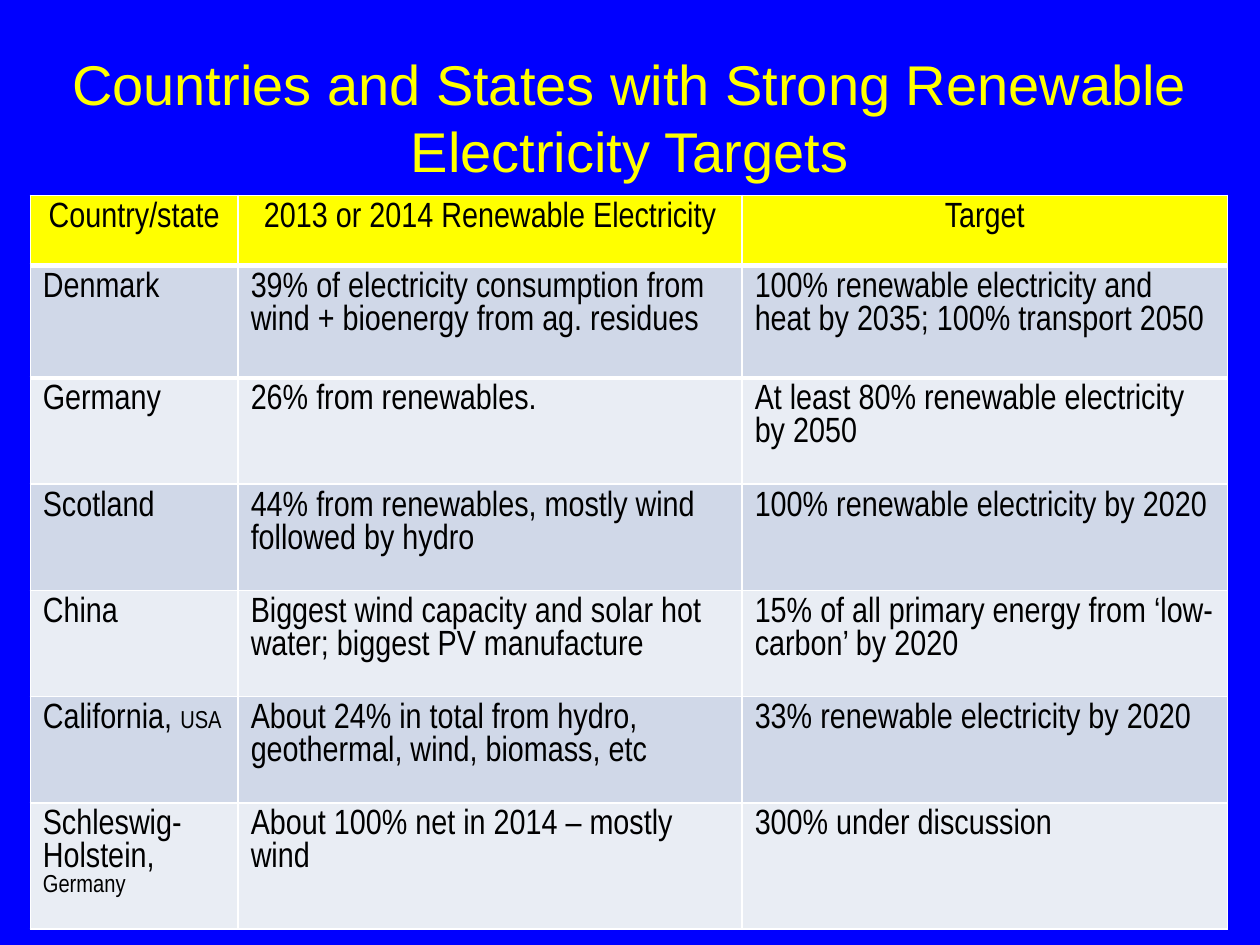
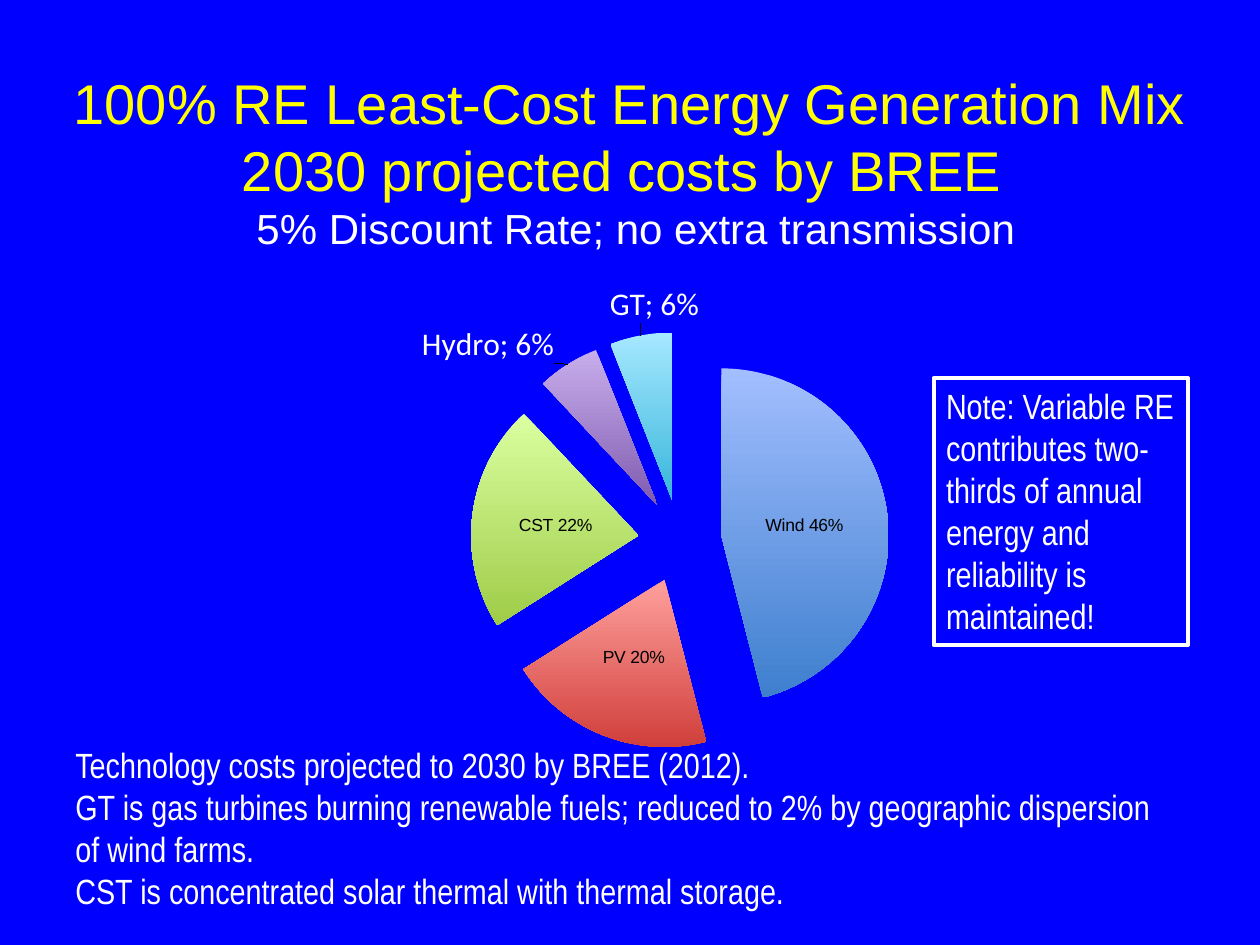
from typing import NamedTuple

import pptx
import pptx.chart.data
import pptx.dml.color
import pptx.enum.chart
import pptx.enum.text
import pptx.oxml
import pptx.oxml.ns
import pptx.util

Pt = pptx.util.Pt
RGBColor = pptx.dml.color.RGBColor
Align = pptx.enum.text.PP_ALIGN
Anchor = pptx.enum.text.MSO_ANCHOR
LabelPosition = pptx.enum.chart.XL_LABEL_POSITION

BLUE = RGBColor(0x00, 0x00, 0xFF)
YELLOW = RGBColor(0xFF, 0xFF, 0x00)
WHITE = RGBColor(0xFF, 0xFF, 0xFF)
BLACK = RGBColor(0x00, 0x00, 0x00)
BAND_COLOURS = (RGBColor(0xD0, 0xD8, 0xE8), RGBColor(0xE9, 0xED, 0xF4))

TITLE_FONT = "Arial"
BODY_FONT = "Arial Narrow"
CHART_FONT = "Calibri"
BODY_SIZE = 20


class Box(NamedTuple):
    left: float
    top: float
    width: float
    height: float

    def lengths(self) -> list:
        return [Pt(value) for value in self]


class Line(NamedTuple):
    """One paragraph of text in a single style."""
    text: str
    size: float = BODY_SIZE
    colour: RGBColor = WHITE
    font: str = BODY_FONT
    align: Align = Align.LEFT


class Target(NamedTuple):
    place: str
    country: str
    current: str
    goal: str


class Slice(NamedTuple):
    """One pie slice; a label shift, in chart fractions, puts its label outside."""
    name: str
    percent: int
    top_colour: RGBColor
    bottom_colour: RGBColor
    label_shift: tuple[float, float] | None = None


HEADINGS = ("Country/state", "2013 or 2014 Renewable Electricity", "Target")
TARGETS = (
    Target("Denmark", "",
           "39% of electricity consumption from wind + bioenergy from ag. residues",
           "100% renewable electricity and heat by 2035; 100% transport 2050"),
    Target("Germany", "", "26% from renewables.",
           "At least 80% renewable electricity by 2050"),
    Target("Scotland", "", "44% from renewables, mostly wind followed by hydro",
           "100% renewable electricity by 2020"),
    Target("China", "",
           "Biggest wind capacity and solar hot water; biggest PV manufacture",
           "15% of all primary energy from ‘low-carbon’ by 2020"),
    Target("California, ", "USA",
           "About 24% in total from hydro, geothermal, wind, biomass, etc",
           "33% renewable electricity by 2020"),
    Target("Schleswig-Holstein, ", "Germany", "About 100% net in 2014 – mostly wind",
           "300% under discussion"),
)
COLUMN_WIDTHS = (118.8, 288, 277.2)
ROW_HEIGHTS = (40.3, 64.1) + (60.7,) * 5

SLICES = (
    Slice("Wind", 46, RGBColor(0xA2, 0xBE, 0xFF), RGBColor(0x3E, 0x7F, 0xCE)),
    Slice("PV", 20, RGBColor(0xFF, 0xA0, 0x9D), RGBColor(0xD0, 0x3F, 0x3B)),
    Slice("CST", 22, RGBColor(0xDA, 0xFF, 0xA0), RGBColor(0x9F, 0xCC, 0x48)),
    Slice("Hydro", 6, RGBColor(0xC8, 0xAE, 0xEC), RGBColor(0x7F, 0x5B, 0xAF), (-0.01, 0.01)),
    Slice("GT", 6, RGBColor(0xA6, 0xE8, 0xFF), RGBColor(0x38, 0xB6, 0xDB), (0.06, -0.01)),
)
EXPLOSION = 25


def title_line(text: str, size: float = 32, colour: RGBColor = YELLOW) -> Line:
    return Line(text, size, colour, TITLE_FONT, Align.CENTER)


def style_font(font, size: float, colour: RGBColor, name: str) -> None:
    font.name = name
    font.size = Pt(size)
    font.bold = False
    font.color.rgb = colour


def add_slide(presentation):
    slide = presentation.slides.add_slide(presentation.slide_layouts[6])
    slide.background.fill.solid()
    slide.background.fill.fore_color.rgb = BLUE
    return slide


def add_text(slide, box: Box, lines: list[Line], anchor: Anchor = Anchor.TOP):
    shape = slide.shapes.add_textbox(*box.lengths())
    frame = shape.text_frame
    frame.word_wrap = True
    frame.vertical_anchor = anchor
    for index, line in enumerate(lines):
        paragraph = frame.add_paragraph() if index else frame.paragraphs[0]
        paragraph.text = line.text
        paragraph.alignment = line.align
        style_font(paragraph.font, line.size, line.colour, line.font)
    return shape


def add_title(slide, height: float, lines: list[Line]):
    return add_text(slide, Box(0, 21.6, 720, height), lines, Anchor.MIDDLE)


def fill_cell(cell, text: str, colour: RGBColor, align: Align, suffix: str = "") -> None:
    cell.fill.solid()
    cell.fill.fore_color.rgb = colour
    paragraph = cell.text_frame.paragraphs[0]
    paragraph.alignment = align
    for part, size in ((text, BODY_SIZE), (suffix, 14)):
        if part:
            run = paragraph.add_run()
            run.text = part
            style_font(run.font, size, BLACK, BODY_FONT)


def add_border(cell, side: str, width: float) -> None:
    cell._tc.get_or_add_tcPr().insert(0, pptx.oxml.parse_xml(
        f'<a:{side} {pptx.oxml.ns.nsdecls("a")} w="{Pt(width)}">'
        f'<a:solidFill><a:srgbClr val="{WHITE}"/></a:solidFill></a:{side}>'))


def add_target_table(slide) -> None:
    box = Box(17.3, 111.6, sum(COLUMN_WIDTHS), sum(ROW_HEIGHTS))
    table = slide.shapes.add_table(
        len(ROW_HEIGHTS), len(COLUMN_WIDTHS), *box.lengths()).table
    for column, width in zip(table.columns, COLUMN_WIDTHS):
        column.width = Pt(width)
    for row, height in zip(table.rows, ROW_HEIGHTS):
        row.height = Pt(height)

    for column, heading in enumerate(HEADINGS):
        fill_cell(table.cell(0, column), heading, YELLOW, Align.CENTER)
        # Thick rule under the heading row
        add_border(table.cell(0, column), "lnB", 3)
        add_border(table.cell(1, column), "lnT", 3)
    for index, target in enumerate(TARGETS):
        band = BAND_COLOURS[index % 2]
        place, current, goal = table.rows[index + 1].cells
        fill_cell(place, target.place, band, Align.LEFT, target.country)
        fill_cell(current, target.current, band, Align.LEFT)
        fill_cell(goal, target.goal, band, Align.LEFT)


def chart_xml(content: str):
    """Parse one chart element, with the chart namespace declared."""
    tag, rest = content.split(" ", 1)
    return pptx.oxml.parse_xml(f"<{tag} {pptx.oxml.ns.nsdecls('c')} {rest}")


def layout_xml(**settings):
    values = "".join(f'<c:{name} val="{value}"/>' for name, value in settings.items())
    return chart_xml(f"c:layout ><c:manualLayout>{values}</c:manualLayout></c:layout>")


def explode(following_element) -> None:
    following_element.addprevious(chart_xml(f'c:explosion val="{EXPLOSION}"/>'))


def remove_layout(element) -> None:
    for layout in element.findall(pptx.oxml.ns.qn("c:layout")):
        element.remove(layout)


def place_plot(chart, x: float, y: float, width: float, height: float) -> None:
    """Fix the inner plot area, in fractions of the chart."""
    plot_area = chart.plots[0]._element.getparent()
    remove_layout(plot_area)
    plot_area.insert(0, layout_xml(
        layoutTarget="inner", xMode="edge", yMode="edge", x=x, y=y, w=width, h=height))


def add_label(series, index: int, part: Slice) -> None:
    label = series.points[index].data_label
    run = label.text_frame.paragraphs[0].add_run()
    if part.label_shift is None:
        run.text = f"{part.name} {part.percent}%"
        style_font(run.font, 10, BLACK, TITLE_FONT)
        label.position = LabelPosition.CENTER
    else:
        run.text = f"{part.name}; {part.percent}%"
        style_font(run.font, 18, WHITE, CHART_FONT)
        label.position = LabelPosition.OUTSIDE_END
        x, y = part.label_shift
        labels = series._element.find(pptx.oxml.ns.qn("c:dLbls"))
        element = labels.findall(pptx.oxml.ns.qn("c:dLbl"))[index]
        remove_layout(element)
        element.insert(1, layout_xml(x=x, y=y))


def add_mix_chart(slide) -> None:
    data = pptx.chart.data.CategoryChartData()
    data.categories = [part.name for part in SLICES]
    data.add_series("Series 1", [part.percent for part in SLICES])
    chart = slide.shapes.add_chart(
        pptx.enum.chart.XL_CHART_TYPE.PIE,
        *Box(81.4, 155.5, 568.8, 284.4).lengths(), data).chart
    chart.has_legend = False
    chart.has_title = False
    style_font(chart.font, 18, BLACK, CHART_FONT)
    place_plot(chart, 0.33, 0.12, 0.42, 0.84)

    plot = chart.plots[0]
    plot.vary_by_categories = True
    series = plot.series[0]
    for index, part in enumerate(SLICES):
        fill = series.points[index].format.fill
        fill.gradient()
        fill.gradient_angle = 270
        for stop, colour in zip(fill.gradient_stops, (part.top_colour, part.bottom_colour)):
            stop.color.rgb = colour
        add_label(series, index, part)

    # Pull the slices apart
    slice_elements = series._element.findall(pptx.oxml.ns.qn("c:dPt"))
    explode(slice_elements[0])
    for element in slice_elements:
        explode(element.find(pptx.oxml.ns.qn("c:spPr")))


def build_targets_slide(presentation) -> None:
    slide = add_slide(presentation)
    add_title(slide, 90, [
        title_line("Countries and States with Strong Renewable Electricity Targets")])
    add_target_table(slide)


def build_mix_slide(presentation) -> None:
    slide = add_slide(presentation)
    title = add_title(slide, 133.9, [
        title_line("100% RE Least-Cost Energy Generation Mix 2030 projected costs by BREE "),
        title_line(" 5% Discount Rate; no extra transmission", 24, WHITE)])
    title.text_frame.margin_top = Pt(10)
    add_mix_chart(slide)

    # Explanations below the chart
    add_text(slide, Box(36, 421.2, 643, 104.4), [
        Line("Technology costs projected to 2030 by BREE (2012)."),
        Line("GT is gas turbines burning renewable fuels; reduced to 2% by "
             "geographic dispersion of wind farms."),
        Line("CST is concentrated solar thermal with thermal storage.")])

    # Framed note beside the chart
    note = add_text(slide, Box(533.5, 216, 145.4, 152.6), [
        Line("Note: Variable RE contributes two-thirds of annual energy and "
             "reliability is maintained!")])
    note.line.color.rgb = WHITE
    note.line.width = Pt(2.25)


def main() -> None:
    presentation = pptx.Presentation()
    presentation.slide_width = Pt(720)
    presentation.slide_height = Pt(540)
    build_targets_slide(presentation)
    build_mix_slide(presentation)
    presentation.save("out.pptx")


if __name__ == "__main__":
    main()
